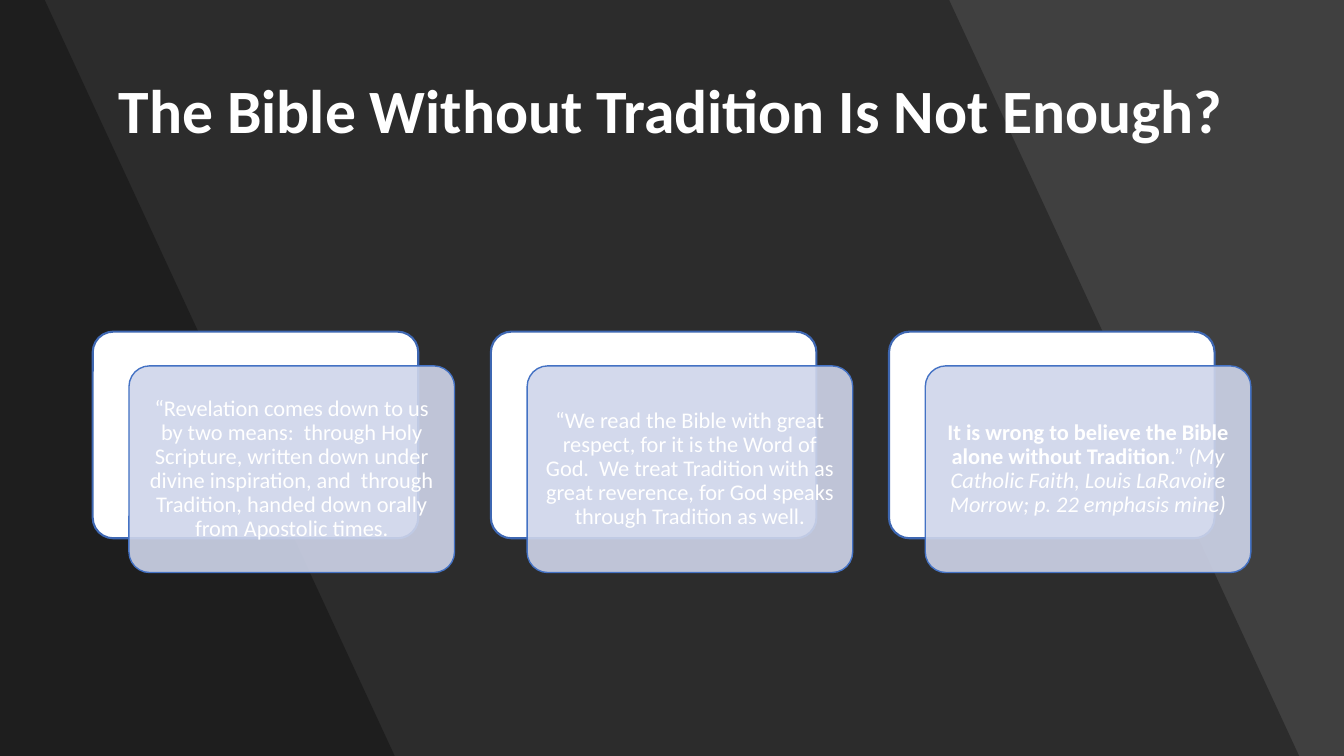
from dataclasses import dataclass

from lxml.etree import SubElement
from pptx import Presentation
from pptx.dml.color import RGBColor
from pptx.dml.fill import FillFormat
from pptx.enum.shapes import MSO_SHAPE
from pptx.enum.text import MSO_ANCHOR, PP_ALIGN
from pptx.oxml.ns import qn
from pptx.shapes.autoshape import Shape
from pptx.slide import Slide
from pptx.text.text import TextFrame, _Paragraph
from pptx.util import Pt

COLORS = {
    "background": "404040",
    "shade": "000000",
    "back_card": "FFFFFF",
    "back_edge": "3E67B2",
    "front_card": "CFD5EA",
    "front_edge": "4472C4",
    "text": "FFFFFF",
}
FONT = "Calibri"
SLIDE_W, SLIDE_H = 960, 540

# Card grid, in points
CARD_W, CARD_H = 232.56, 147.6
CARD_LEFT, CARD_TOP = 66.24, 236.88
CARD_PITCH = 284.4
FRONT_DX, FRONT_DY = 25.92, 24.48
CARD_INSET = 5.04


@dataclass(frozen=True)
class Phrase:
    text: str
    bold: bool = False
    italic: bool = False


@dataclass(frozen=True)
class Band:
    top_right: float
    bottom_right: float


BANDS = [Band(678.24, 928.08), Band(31.68, 282.24)]

QUOTES = [
    [Phrase("“Revelation comes down to us by two means:  through Holy Scripture, "
            "written down under divine inspiration, and  through Tradition, "
            "handed down orally from Apostolic times.")],
    [Phrase("“We read the Bible with great respect, for it is the Word of God.  "
            "We treat Tradition with as great reverence, for God speaks through "
            "Tradition as well.")],
    [Phrase("It is wrong to believe the Bible alone without Tradition", bold=True),
     Phrase(".” "),
     Phrase("(My Catholic Faith, Louis LaRavoire Morrow; p. 22 emphasis mine)",
            italic=True)],
]


def paint(fill: FillFormat, color: str, opacity: int = 100) -> None:
    fill.solid()
    fill.fore_color.rgb = RGBColor.from_string(COLORS[color])
    if opacity < 100:
        srgb = fill._xPr.find(qn("a:solidFill")).find(qn("a:srgbClr"))
        SubElement(srgb, qn("a:alpha")).set("val", str(opacity * 1000))


def centered_paragraph(frame: TextFrame, size: float) -> _Paragraph:
    frame.word_wrap = True
    frame.vertical_anchor = MSO_ANCHOR.MIDDLE
    paragraph = frame.paragraphs[0]
    paragraph.alignment = PP_ALIGN.CENTER
    paragraph.line_spacing = 0.9
    paragraph.font.name = FONT
    paragraph.font.size = Pt(size)
    paragraph.font.color.rgb = RGBColor.from_string(COLORS["text"])
    return paragraph


def add_band(slide: Slide, band: Band) -> None:
    builder = slide.shapes.build_freeform(0, 0, scale=Pt(1))
    builder.add_line_segments(
        [(band.top_right, 0), (band.bottom_right, SLIDE_H), (0, SLIDE_H)], close=True)
    shade = builder.convert_to_shape()
    shade.shadow.inherit = False
    paint(shade.fill, "shade", opacity=30)
    shade.line.fill.background()


def add_title(slide: Slide, text: str) -> None:
    title = slide.shapes.add_textbox(Pt(65.52), Pt(28.8), Pt(828.72), Pt(104.4))
    heading = centered_paragraph(title.text_frame, 44)
    heading.font.bold = True
    heading.add_run().text = text


def add_card(slide: Slide, left: float, top: float, color: str, edge: str,
             edge_width: float, opacity: int = 100) -> Shape:
    card = slide.shapes.add_shape(
        MSO_SHAPE.ROUNDED_RECTANGLE, Pt(left), Pt(top), Pt(CARD_W), Pt(CARD_H))
    card.adjustments[0] = 0.1
    card.shadow.inherit = False
    paint(card.fill, color, opacity)
    card.line.color.rgb = RGBColor.from_string(COLORS[edge])
    card.line.width = Pt(edge_width)
    return card


def add_quote(slide: Slide, left: float, phrases: list[Phrase]) -> None:
    add_card(slide, left, CARD_TOP, "back_card", "back_edge", 1.5)
    front = add_card(slide, left + FRONT_DX, CARD_TOP + FRONT_DY,
                     "front_card", "front_edge", 1, opacity=90)
    frame = front.text_frame
    frame.margin_left = frame.margin_right = Pt(CARD_INSET)
    frame.margin_top = frame.margin_bottom = Pt(CARD_INSET)
    quote = centered_paragraph(frame, 16)
    for phrase in phrases:
        run = quote.add_run()
        run.text = phrase.text
        run.font.bold = phrase.bold
        run.font.italic = phrase.italic


def main() -> None:
    deck = Presentation()
    deck.slide_width, deck.slide_height = Pt(SLIDE_W), Pt(SLIDE_H)
    slide = deck.slides.add_slide(deck.slide_layouts[6])

    # Background with slanted shades
    paint(slide.background.fill, "background")
    for band in BANDS:
        add_band(slide, band)

    add_title(slide, "The Bible Without Tradition Is Not Enough?")

    # Row of quote cards
    for column, phrases in enumerate(QUOTES):
        add_quote(slide, CARD_LEFT + column * CARD_PITCH, phrases)

    deck.save("out.pptx")


if __name__ == "__main__":
    main()
